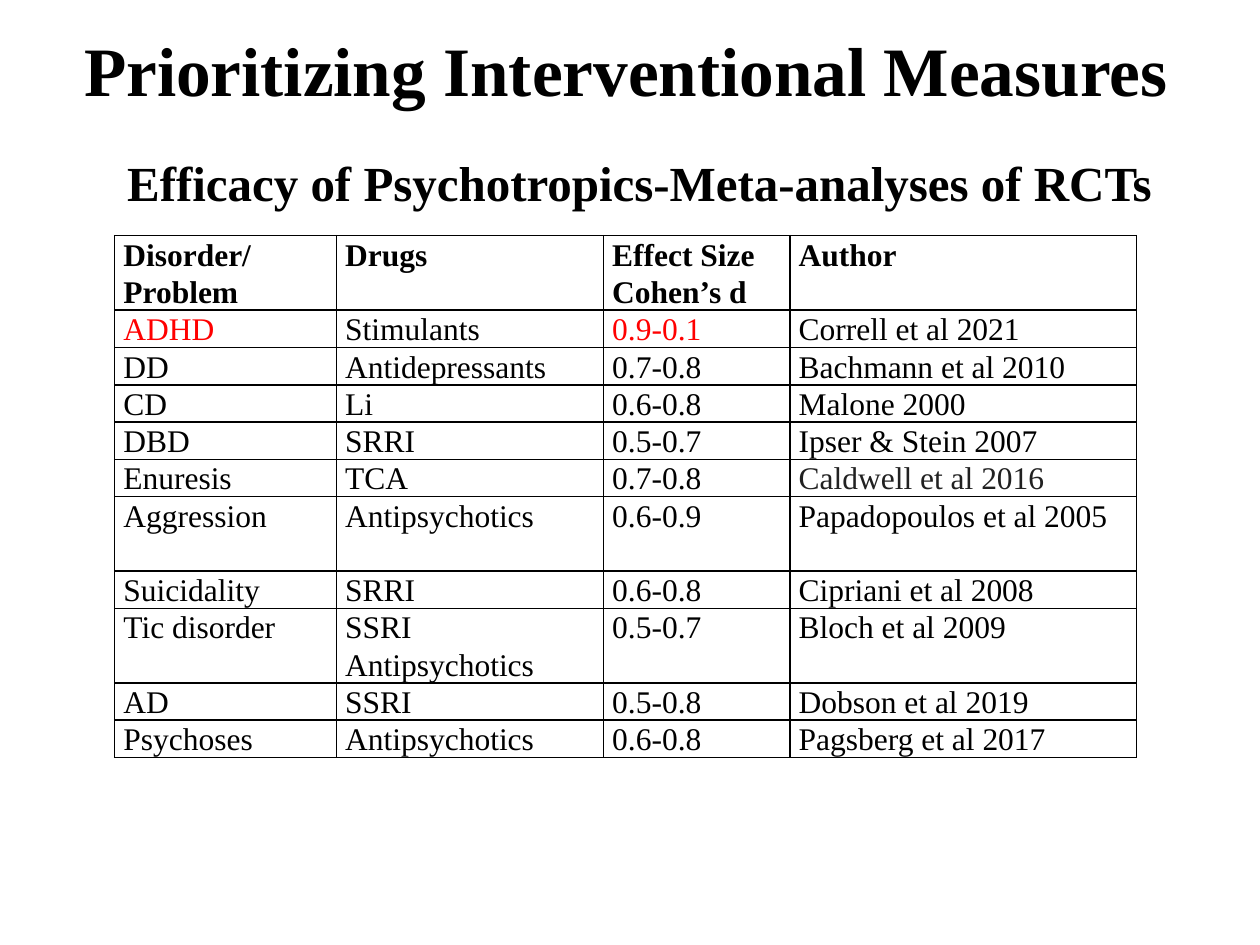
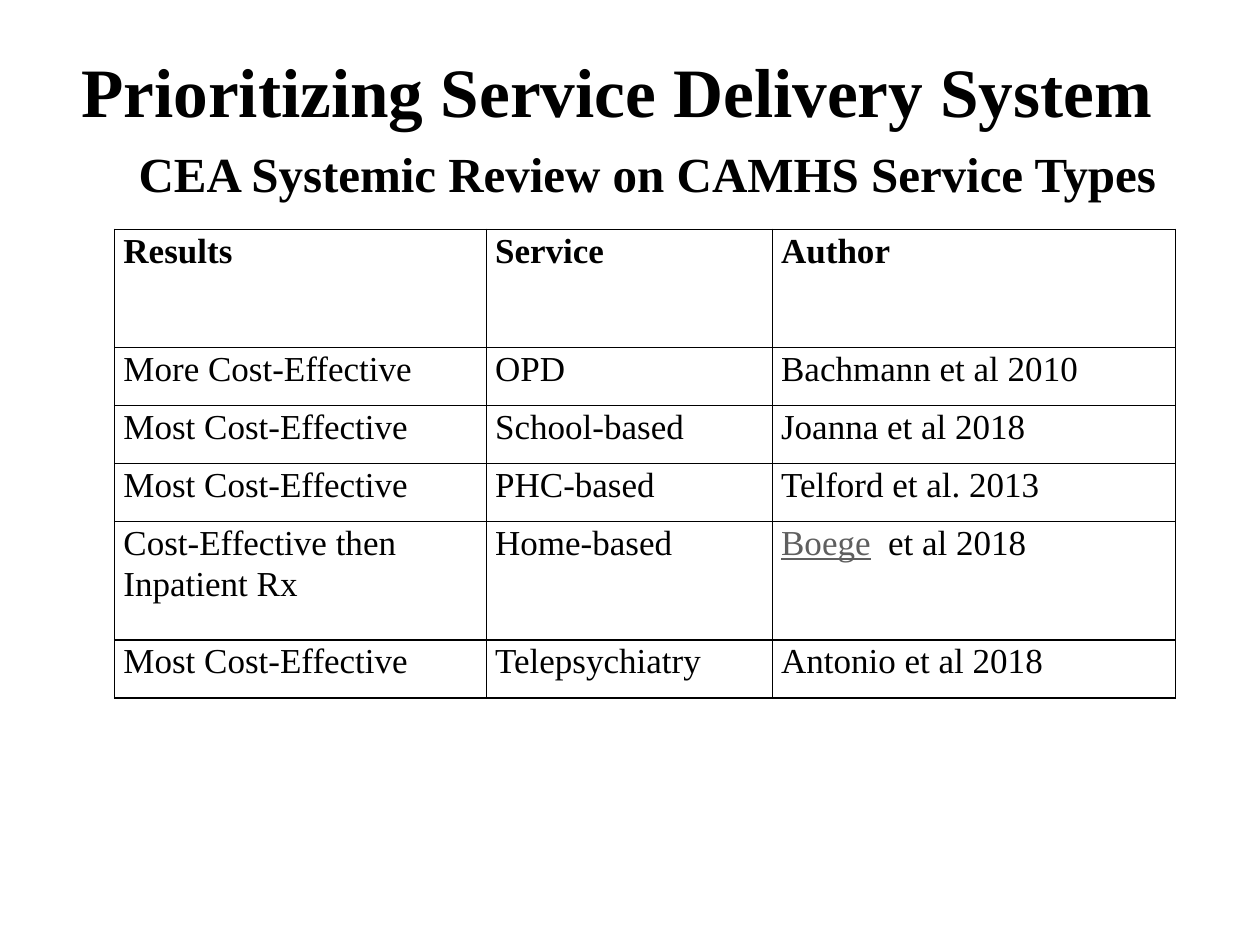
from lxml import etree
from pptx import Presentation
from pptx.dml.color import RGBColor as RGB
from pptx.enum.text import MSO_ANCHOR as Anchor, PP_ALIGN as Align
from pptx.oxml.ns import qn
from pptx.util import Inches, Pt

FONT = "Times New Roman"
COLORS = {"text": "000000", "red": "FF0000", "dark": "212121", "link": "5F5F5F"}
TINTS = {"ADHD": "red", "0.9-0.1": "red", "Caldwell\u00a0et al 2016": "dark"}
LINKED = "Boege"

SLIDES = [
    {
        "title": ("Prioritizing Interventional Measures", 0.47, 0.55, Align.CENTER),
        "sub": ("Efficacy of Psychotropics-Meta-analyses of RCTs", 1.01, 1.44, Align.LEFT),
        "top": 1.87, "size": 18, "pitch": 21.3,
        "cols": [1.76, 2.12, 1.48, 2.75],
        "low": 0.29, "high": 0.59, "tall": (0, 6, 8),
        "rows": [
            ("Disorder/Problem", "Drugs", "Effect Size\nCohen’s d", "Author"),
            ("ADHD", "Stimulants", "0.9-0.1", "Correll et al 2021"),
            ("DD", "Antidepressants", "0.7-0.8", "Bachmann et al 2010"),
            ("CD", "Li", "0.6-0.8", "Malone 2000"),
            ("DBD", "SRRI", "0.5-0.7", "Ipser & Stein 2007"),
            ("Enuresis", "TCA", "0.7-0.8", "Caldwell\u00a0et al 2016"),
            ("Aggression", "Antipsychotics", "0.6-0.9", "Papadopoulos et al 2005"),
            ("Suicidality", "SRRI", "0.6-0.8", "Cipriani et al 2008"),
            ("Tic disorder", "SSRI Antipsychotics", "0.5-0.7", "Bloch et al 2009"),
            ("AD", "SSRI", "0.5-0.8", "Dobson et al 2019"),
            ("Psychoses", "Antipsychotics", "0.6-0.8", "Pagsberg et al 2017"),
        ],
    },
    {
        "title": ("Prioritizing Service Delivery System", 0.4, 0.71, Align.CENTER),
        "sub": ("CEA Systemic Review on CAMHS Service Types", 1.1, 1.37, Align.LEFT),
        "top": 1.82, "size": 20, "pitch": 23.7,
        "cols": [2.95, 2.27, 3.2],
        "low": 0.46, "high": 0.94, "tall": (0, 4),
        "rows": [
            ("Results", "Service", "Author"),
            ("More Cost-Effective", "OPD", "Bachmann et al 2010"),
            ("Most Cost-Effective", "School-based", "Joanna et al 2018"),
            ("Most Cost-Effective", "PHC-based", "Telford et al. 2013"),
            ("Cost-Effective then Inpatient Rx", "Home-based", "Boege  et al 2018"),
            ("Most Cost-Effective", "Telepsychiatry", "Antonio et al 2018"),
        ],
    },
]


def style(run, size, bold, tint="text"):
    font = run.font
    font.name, font.size, font.bold = FONT, Pt(size), bold
    font.color.rgb = RGB.from_string(COLORS[tint])


def frame(cell):
    """Give a cell a thin line on each side and no fill."""
    props = cell._tc.get_or_add_tcPr()
    for side in ("lnL", "lnR", "lnT", "lnB"):
        line = etree.SubElement(props, qn("a:" + side), w=str(Pt(1)))
        fill = etree.SubElement(line, qn("a:solidFill"))
        etree.SubElement(fill, qn("a:srgbClr"), val=COLORS["text"])
    cell.fill.background()


deck = Presentation()
deck.slide_width, deck.slide_height = Inches(10), Inches(7.5)

for page in SLIDES:
    slide = deck.slides.add_slide(deck.slide_layouts[6])

    # Title and subtitle, each centred on its own height
    for part, size, tall in (("title", 39.6, 0.7), ("sub", 28, 0.5)):
        text, left, mid, align = page[part]
        box = slide.shapes.add_textbox(
            Inches(left), Inches(mid - tall / 2), Inches(9), Inches(tall))
        body = box.text_frame
        body.word_wrap = True
        body.vertical_anchor = Anchor.MIDDLE
        body.margin_left = body.margin_right = 0
        body.margin_top = body.margin_bottom = 0
        para = body.paragraphs[0]
        para.text = text
        para.alignment = align
        style(para.runs[0], size, True)

    # Table
    rows, cols = page["rows"], page["cols"]
    highs = [page["high"] if r in page["tall"] else page["low"]
             for r in range(len(rows))]
    grid = slide.shapes.add_table(
        len(rows), len(cols), Inches(0.91), Inches(page["top"]),
        Inches(sum(cols)), Inches(sum(highs))).table
    grid.horz_banding = False
    for col, wide in zip(grid.columns, cols):
        col.width = Inches(wide)
    for r, (row, high) in enumerate(zip(rows, highs)):
        grid.rows[r].height = Inches(high)
        for c, text in enumerate(row):
            cell = grid.cell(r, c)
            frame(cell)
            cell.margin_left = cell.margin_right = Inches(0.07)
            cell.margin_top = cell.margin_bottom = 0
            cell.text_frame.text = text
            for para in cell.text_frame.paragraphs:
                para.line_spacing = Pt(page["pitch"])
                if text.startswith(LINKED):
                    para.text = LINKED
                    para.add_run().text = text[len(LINKED):]
                for run in para.runs:
                    tint = "link" if run.text == LINKED else TINTS.get(text, "text")
                    style(run, page["size"], r == 0, tint)
                    run.font.underline = tint == "link"

deck.save("out.pptx")
